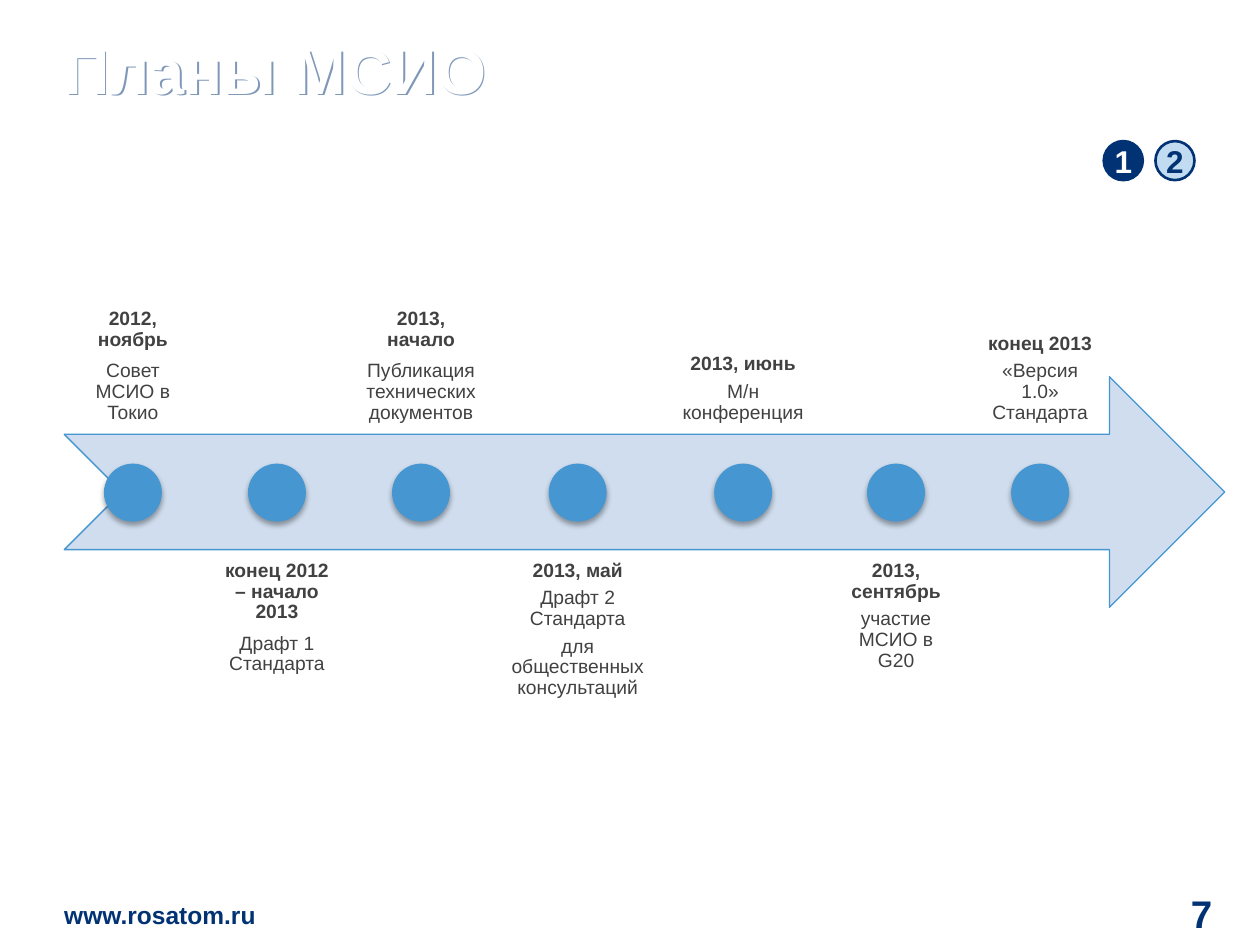
import dataclasses

import lxml.etree
import pptx
import pptx.dml.color
import pptx.enum.shapes
import pptx.enum.text
import pptx.oxml.ns
import pptx.util

Inches = pptx.util.Inches
Pt = pptx.util.Pt
Align = pptx.enum.text.PP_ALIGN
Anchor = pptx.enum.text.MSO_ANCHOR
Shape = pptx.enum.shapes.MSO_SHAPE


@dataclasses.dataclass(frozen=True)
class Theme:
    font: str = "Arial"
    navy: str = "003274"
    pale_blue: str = "C1DCF1"
    arrow: str = "CFDDEE"
    accent: str = "4596D1"
    body: str = "414142"
    white: str = "FFFFFF"
    black: str = "000000"
    title_size: float = 36
    page_size: float = 22
    badge_size: float = 18
    footer_size: float = 14
    label_size: float = 11


THEME = Theme()
MARGIN = 0.51
AXIS = 3.91
DOT = 0.46
LABEL_HEIGHT = 1.83
LABELS_RIGHT = 8.8
WIDE, TIGHT = 6, 3.85

MILESTONES = [
    (1.09, WIDE, ["2012, ноябрь", "Совет МСИО в Токио"]),
    (1.09, WIDE, ["конец 2012 – начало 2013", "Драфт 1 Стандарта"]),
    (1.09, WIDE, ["2013, начало", "Публикация технических документов"]),
    (1.29, TIGHT, ["2013, май", "Драфт 2 Стандарта", "для общественных консультаций"]),
    (1.23, TIGHT, ["2013, июнь", "М/н конференция"]),
    (1.09, TIGHT, ["2013, сентябрь", "участие МСИО в G20"]),
    (1.09, TIGHT, ["конец 2013", "«Версия 1.0» Стандарта"]),
]


def apply(target, values):
    for name, value in values.items():
        setattr(target, name, value)


def rgb(value):
    return pptx.dml.color.RGBColor.from_string(value)


def box(left, top, width, height):
    return [Inches(value) for value in (left, top, width, height)]


def write(shape, lines, size, color, align=Align.LEFT, anchor=Anchor.TOP,
          inset=0, wrap=True, spacing=None, after=0, bold_rest=True):
    frame = shape.text_frame
    margins = ("margin_left", "margin_top", "margin_right", "margin_bottom")
    apply(frame, dict.fromkeys(margins, Inches(inset)))
    apply(frame, {"word_wrap": wrap, "vertical_anchor": anchor})
    for index, line in enumerate(lines):
        paragraph = frame.paragraphs[0] if index == 0 else frame.add_paragraph()
        apply(paragraph, {"alignment": align, "line_spacing": spacing,
                          "space_after": Pt(after)})
        run = paragraph.add_run()
        run.text = line
        apply(run.font, {"name": THEME.font, "size": Pt(size),
                         "bold": index == 0 or bold_rest})
        run.font.color.rgb = rgb(color)


def add_text(slide, place, lines, size, color, **options):
    shape = slide.shapes.add_textbox(*box(*place))
    write(shape, lines, size, color, **options)
    return shape


def add_figure(slide, kind, place, fill, line=None, line_width=0):
    shape = slide.shapes.add_shape(kind, *box(*place))
    shape.shadow.inherit = False
    shape.fill.solid()
    shape.fill.fore_color.rgb = rgb(fill)
    if line:
        shape.line.color.rgb = rgb(line)
        shape.line.width = Pt(line_width)
    else:
        shape.line.fill.background()
    return shape


def add_shadow(shape, color, opacity, blur, distance, angle):
    qn = pptx.oxml.ns.qn
    shape.shadow.inherit = False
    effects = shape.element.spPr.find(qn("a:effectLst"))
    shadow = lxml.etree.SubElement(
        effects, qn("a:outerShdw"), blurRad=str(Pt(blur)), dist=str(Pt(distance)),
        dir=str(angle * 60000), algn="ctr", rotWithShape="0")
    tone = lxml.etree.SubElement(shadow, qn("a:srgbClr"), val=color)
    lxml.etree.SubElement(tone, qn("a:alpha"), val=str(opacity * 1000))


def add_badge(slide, left, number, fill, color):
    badge = add_figure(slide, Shape.OVAL, (left, 1.12, 0.31, 0.31),
                       fill, THEME.navy, 1.5)
    write(badge, [number], THEME.badge_size, color, align=Align.CENTER,
          anchor=Anchor.MIDDLE, wrap=False)


def add_milestone(slide, left, width, after, lines, above):
    top, anchor = (1.62, Anchor.BOTTOM) if above else (4.36, Anchor.TOP)
    add_text(slide, (left, top, width, LABEL_HEIGHT), lines, THEME.label_size,
             THEME.body, align=Align.CENTER, anchor=anchor, inset=0.09,
             spacing=0.9, after=after, bold_rest=False)
    dot = add_figure(slide, Shape.OVAL,
                     (left + (width - DOT) / 2, AXIS - DOT / 2, DOT, DOT),
                     THEME.accent)
    add_shadow(dot, THEME.black, 35, 3.1, 1.8, 90)


def add_timeline(slide):
    add_figure(slide, Shape.NOTCHED_RIGHT_ARROW, (MARGIN, 2.99, 9.21, 1.83),
               THEME.arrow, THEME.accent, 0.75)
    used = sum(width for width, _, _ in MILESTONES)
    gap = (LABELS_RIGHT - MARGIN - used) / (len(MILESTONES) - 1)
    left = MARGIN
    for index, (width, after, lines) in enumerate(MILESTONES):
        add_milestone(slide, left, width, after, lines, above=index % 2 == 0)
        left += width + gap


def main():
    presentation = pptx.Presentation()
    apply(presentation, {"slide_width": Inches(10), "slide_height": Inches(7.5)})
    slide = presentation.slides.add_slide(presentation.slide_layouts[6])
    add_text(slide, (MARGIN, 7.14, 1.6, 0.23), ["www.rosatom.ru"],
             THEME.footer_size, THEME.navy)
    add_badge(slide, 8.76, "1", THEME.navy, THEME.white)
    add_badge(slide, 9.17, "2", THEME.pale_blue, THEME.navy)
    title = add_text(slide, (MARGIN, 0.09, 8.98, 0.99), ["Планы МСИО"],
                     THEME.title_size, THEME.white, anchor=Anchor.MIDDLE,
                     spacing=0.9)
    add_shadow(title, THEME.navy, 50, 0, 1.4, 45)
    add_timeline(slide)
    page_number = add_text(slide, (9.09, 7.04, 0.89, 0.41), ["7"], THEME.page_size,
                           THEME.navy, align=Align.RIGHT, anchor=Anchor.MIDDLE)
    page_number.text_frame.margin_right = Inches(0.36)
    presentation.save("out.pptx")


if __name__ == "__main__":
    main()
